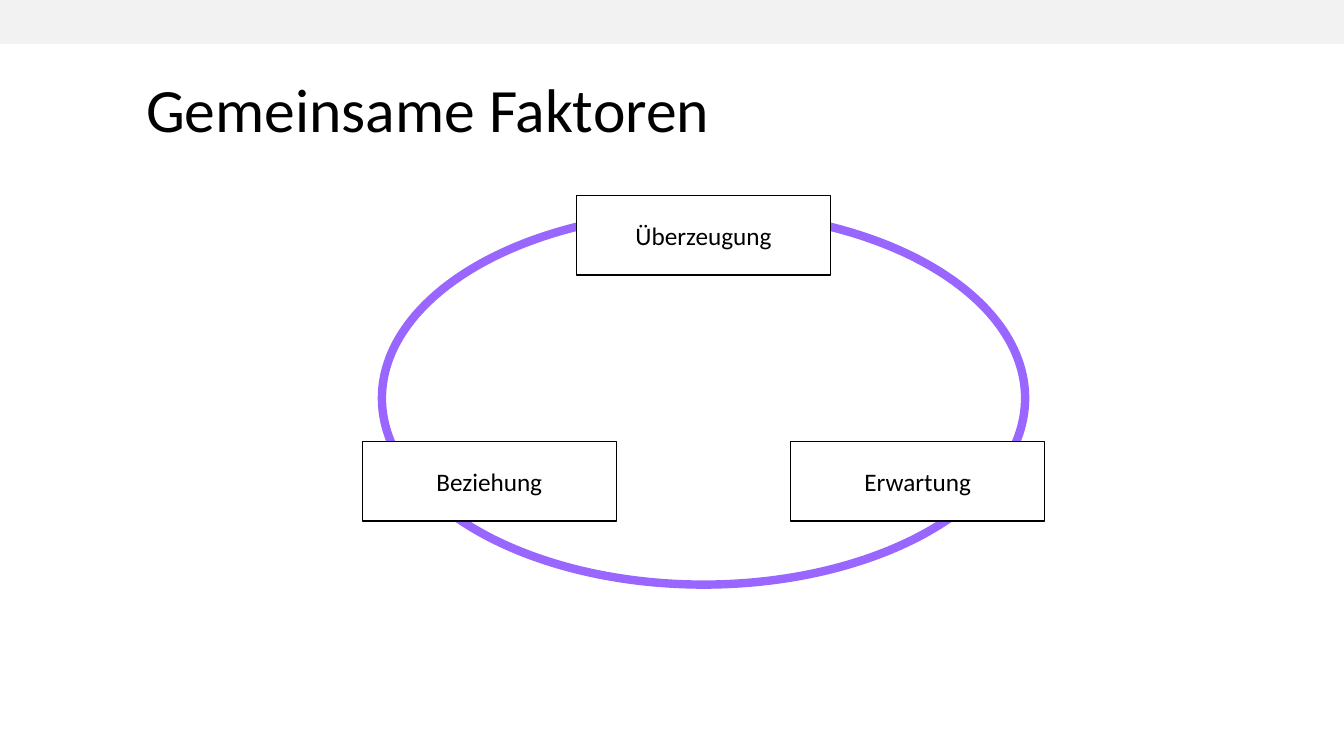
from dataclasses import dataclass

from pptx import Presentation
from pptx.dml.color import RGBColor
from pptx.enum.shapes import MSO_SHAPE
from pptx.enum.text import MSO_ANCHOR, MSO_AUTO_SIZE, PP_ALIGN
from pptx.shapes.autoshape import Shape
from pptx.slide import Slide
from pptx.text.text import TextFrame
from pptx.util import Pt

FONT = "Calibri"
BLACK = "000000"
WHITE = "FFFFFF"
LIGHT_GREY = "F2F2F2"
PURPLE = "9966FF"

SLIDE_WIDTH, SLIDE_HEIGHT = 960, 540
RING_CENTER = 502.5
RING_WIDTH, RING_HEIGHT = 459.4, 266.4
BOX_WIDTH, BOX_HEIGHT = 181.5, 57
LOWER_OFFSET = 153


@dataclass(frozen=True)
class Factor:
    label: str
    center: float
    top: float


FACTORS = (
    Factor("Überzeugung", RING_CENTER, 139.5),
    Factor("Erwartung", RING_CENTER + LOWER_OFFSET, 315.3),
    Factor("Beziehung", RING_CENTER - LOWER_OFFSET, 315.3),
)


def color(value: str) -> RGBColor:
    return RGBColor.from_string(value)


def add_preset(slide: Slide, preset: MSO_SHAPE, left: float, top: float,
               width: float, height: float, fill: str | None = None,
               line: str | None = None, line_width: float = 1) -> Shape:
    """Add a flat shape; a missing colour means no fill or no outline."""
    shape = slide.shapes.add_shape(preset, Pt(left), Pt(top), Pt(width), Pt(height))
    shape.shadow.inherit = False
    if fill:
        shape.fill.solid()
        shape.fill.fore_color.rgb = color(fill)
    else:
        shape.fill.background()
    if line:
        shape.line.color.rgb = color(line)
        shape.line.width = Pt(line_width)
    else:
        shape.line.fill.background()
    return shape


def write_text(frame: TextFrame, text: str, size: float, alignment: PP_ALIGN,
               wrap: bool) -> None:
    frame.word_wrap = wrap
    frame.auto_size = MSO_AUTO_SIZE.NONE
    frame.vertical_anchor = MSO_ANCHOR.MIDDLE
    paragraph = frame.paragraphs[0]
    paragraph.alignment = alignment
    run = paragraph.add_run()
    run.text = text
    run.font.name = FONT
    run.font.size = Pt(size)
    run.font.color.rgb = color(BLACK)


def add_title(slide: Slide, text: str) -> None:
    title = slide.shapes.title
    title.left, title.top = Pt(97.2), Pt(41.8)
    title.width, title.height = Pt(730.8), Pt(77.8)
    write_text(title.text_frame, text, 44, PP_ALIGN.LEFT, wrap=True)
    title.text_frame.paragraphs[0].line_spacing = 0.9


def add_factor(slide: Slide, factor: Factor) -> None:
    box = add_preset(slide, MSO_SHAPE.RECTANGLE, factor.center - BOX_WIDTH / 2,
                     factor.top, BOX_WIDTH, BOX_HEIGHT, WHITE, BLACK)
    write_text(box.text_frame, factor.label, 18, PP_ALIGN.CENTER, wrap=False)


def main() -> None:
    presentation = Presentation()
    presentation.slide_width = Pt(SLIDE_WIDTH)
    presentation.slide_height = Pt(SLIDE_HEIGHT)
    title_only = presentation.slide_layouts[5]
    slide = presentation.slides.add_slide(title_only)

    add_preset(slide, MSO_SHAPE.RECTANGLE, 0, 0, SLIDE_WIDTH, 31.4, LIGHT_GREY)
    add_title(slide, "Gemeinsame Faktoren")
    add_preset(slide, MSO_SHAPE.OVAL, RING_CENTER - RING_WIDTH / 2, 151.2,
               RING_WIDTH, RING_HEIGHT, line=PURPLE, line_width=6)
    for factor in FACTORS:
        add_factor(slide, factor)

    presentation.save("out.pptx")


if __name__ == "__main__":
    main()
